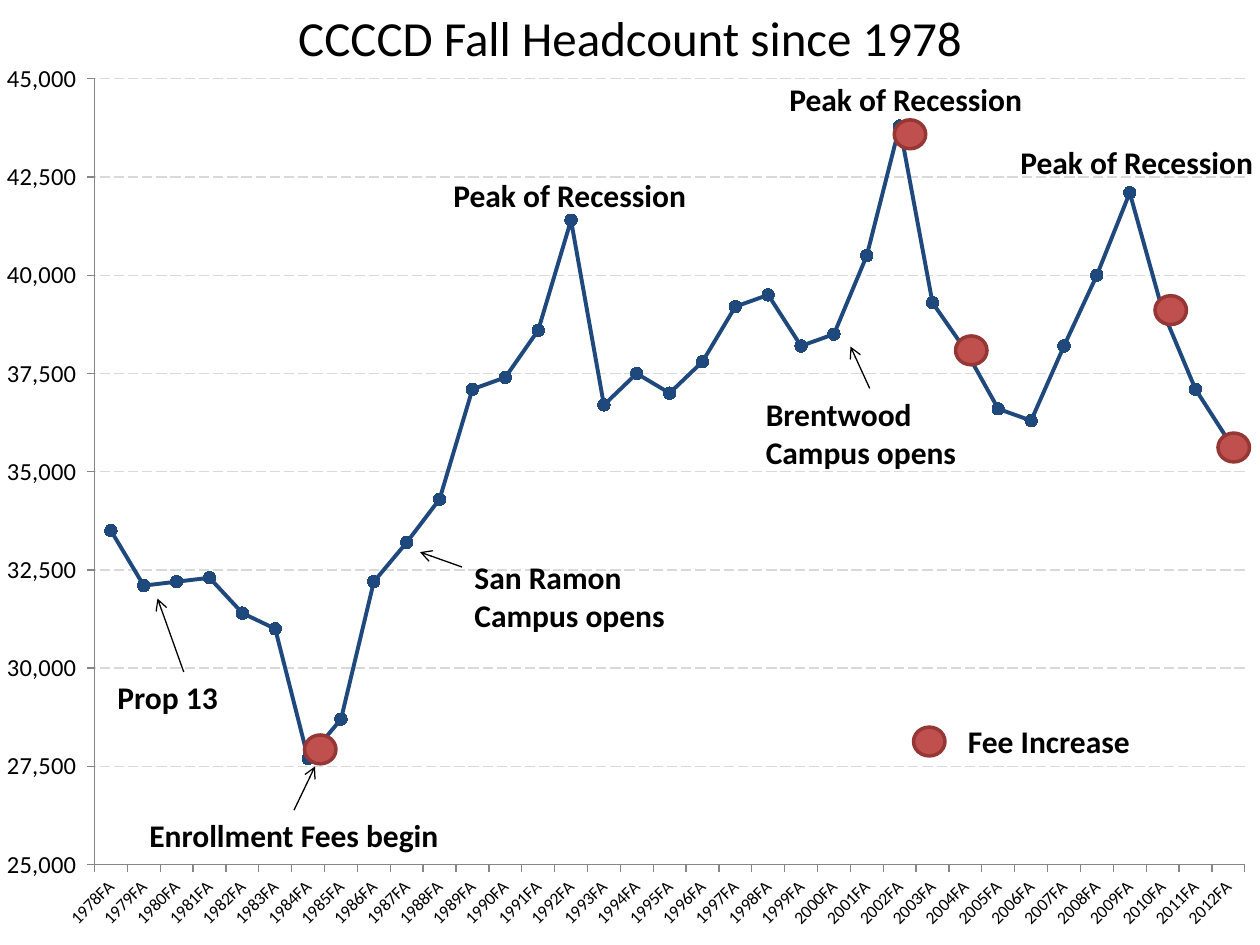
from dataclasses import dataclass

from lxml.etree import SubElement
from pptx import Presentation
from pptx.chart.data import CategoryChartData
from pptx.dml.color import RGBColor
from pptx.enum.chart import XL_CHART_TYPE, XL_MARKER_STYLE, XL_TICK_MARK
from pptx.enum.dml import MSO_LINE
from pptx.enum.shapes import MSO_CONNECTOR, MSO_SHAPE
from pptx.enum.text import PP_ALIGN
from pptx.oxml import parse_xml
from pptx.oxml.ns import nsdecls, qn
from pptx.util import Pt


@dataclass(frozen=True)
class Theme:
    font: str = "Calibri"
    text: RGBColor = RGBColor(0x00, 0x00, 0x00)
    headcount: RGBColor = RGBColor(0x1F, 0x49, 0x7D)
    grid: RGBColor = RGBColor(0xD9, 0xD9, 0xD9)
    axis: RGBColor = RGBColor(0x86, 0x86, 0x86)
    fee: RGBColor = RGBColor(0xC0, 0x50, 0x4D)
    fee_edge: RGBColor = RGBColor(0x95, 0x37, 0x35)
    title_size: Pt = Pt(28)
    note_size: Pt = Pt(18)
    value_size: Pt = Pt(14)
    year_size: Pt = Pt(10)


theme = Theme()
prs = Presentation()
prs.slide_width, prs.slide_height = Pt(720), Pt(540)
slide = prs.slides.add_slide(prs.slide_layouts[6])


def add_label(text, left, top, width, height, size=theme.note_size,
              bold=True, align=PP_ALIGN.LEFT):
    box = slide.shapes.add_textbox(Pt(left), Pt(top), Pt(width), Pt(height))
    box.text_frame.word_wrap = True
    paragraph = box.text_frame.paragraphs[0]
    paragraph.alignment = align
    run = paragraph.add_run()
    run.text = text
    run.font.name, run.font.size, run.font.bold = theme.font, size, bold
    run.font.color.rgb = theme.text


# Headcount chart
headcounts = [
    33500, 32100, 32200, 32300, 31400, 31000, 27700, 28700, 32200, 33200,
    34300, 37100, 37400, 38600, 41400, 36700, 37500, 37000, 37800, 39200,
    39500, 38200, 38500, 40500, 43800, 39300, 38100, 36600, 36300, 38200,
    40000, 42100, 39100, 37100, 35800,
]
data = CategoryChartData()
data.categories = [f"{1978 + i}FA" for i in range(len(headcounts))]
data.add_series("Headcount", headcounts)
chart = slide.shapes.add_chart(
    XL_CHART_TYPE.LINE_MARKERS, Pt(0), Pt(36), Pt(720), Pt(504), data).chart
chart.has_title = False
chart.has_legend = False
chart.font.name, chart.font.size = theme.font, theme.year_size
chart.font.color.rgb = theme.text
chart.plots[0].vary_by_categories = False

series = chart.plots[0].series[0]
series.smooth = False
series.format.line.color.rgb = theme.headcount
series.format.line.width = Pt(2.25)
series.marker.style, series.marker.size = XL_MARKER_STYLE.CIRCLE, 7
series.marker.format.fill.solid()
series.marker.format.fill.fore_color.rgb = theme.headcount
series.marker.format.line.color.rgb = theme.headcount

values, years = chart.value_axis, chart.category_axis
for axis, size in [(values, theme.value_size), (years, theme.year_size)]:
    axis.major_tick_mark = XL_TICK_MARK.OUTSIDE
    axis.format.line.color.rgb = theme.axis
    axis.format.line.width = Pt(0.75)
    axis.tick_labels.font.size = size
    axis.tick_labels.font.name = theme.font
    axis.tick_labels.font.color.rgb = theme.text
values.minimum_scale, values.maximum_scale = 25000, 45000
values.major_unit = 2500
values.tick_labels.number_format = r'_(* #,##0_);_(* \(#,##0\);_(* "-"??_);_('
values.tick_labels.number_format_is_linked = False
values.has_major_gridlines = True
grid_line = values.major_gridlines.format.line
grid_line.color.rgb, grid_line.width = theme.grid, Pt(0.75)
grid_line.dash_style = MSO_LINE.LONG_DASH

# Slanted year labels and a fixed plot area
years_body = years._element.find(qn("c:txPr")).find(qn("a:bodyPr"))
years_body.set("rot", "-2700000")
years_body.set("vert", "horz")
plot_area = chart._chartSpace.chart.plotArea
for automatic in plot_area.findall(qn("c:layout")):
    plot_area.remove(automatic)
plot_area.insert(0, parse_xml(
    f'<c:layout {nsdecls("c")}><c:manualLayout><c:layoutTarget val="inner"/>'
    '<c:xMode val="edge"/><c:yMode val="edge"/><c:x val="0.075"/>'
    '<c:y val="0.018"/><c:w val="0.913"/><c:h val="0.891"/>'
    '</c:manualLayout></c:layout>'))

# Title and notes
add_label("CCCCD Fall Headcount since 1978", 0, 0.7, 720, 41,
          theme.title_size, False, PP_ALIGN.CENTER)
add_label("Enrollment Fees begin", 72, 463, 192, 29, align=PP_ALIGN.CENTER)
add_label("Prop 13", 60, 384, 90, 30)
add_label("Fee Increase", 546, 409, 132, 29)
for left, top in [(252, 97), (444, 42), (576, 78)]:
    add_label("Peak of Recession", left, top, 162, 29)
for campus, left, top in [("San Ramon", 264, 315.5), ("Brentwood", 430.5, 222)]:
    add_label(f"{campus} Campus opens", left, top, 132, 51)

# Arrows from each note to its year
for start_x, start_y, end_x, end_y in [
    (105, 384, 90, 342),      # Prop 13
    (168, 463, 180, 438),     # Enrollment fees
    (264, 324, 240, 315.5),   # San Ramon
    (497, 222, 486, 198),     # Brentwood
]:
    arrow = slide.shapes.add_connector(
        MSO_CONNECTOR.STRAIGHT, Pt(start_x), Pt(start_y), Pt(end_x), Pt(end_y))
    arrow.line.color.rgb, arrow.line.width = theme.text, Pt(0.75)
    SubElement(arrow.line._get_or_add_ln(), qn("a:tailEnd"), type="arrow")
    SubElement(arrow._element.spPr, qn("a:effectLst"))

# Fee increases: the key first, then the marks on the line
for left, top in [(522, 415.5), (174, 420), (511, 68.5), (546, 192),
                  (660, 169), (696, 247.5)]:
    fee_mark = slide.shapes.add_shape(
        MSO_SHAPE.OVAL, Pt(left), Pt(top), Pt(18), Pt(16.5))
    fee_mark.shadow.inherit = False
    fee_mark.fill.solid()
    fee_mark.fill.fore_color.rgb = theme.fee
    fee_mark.line.color.rgb, fee_mark.line.width = theme.fee_edge, Pt(2)

prs.save("out.pptx")
